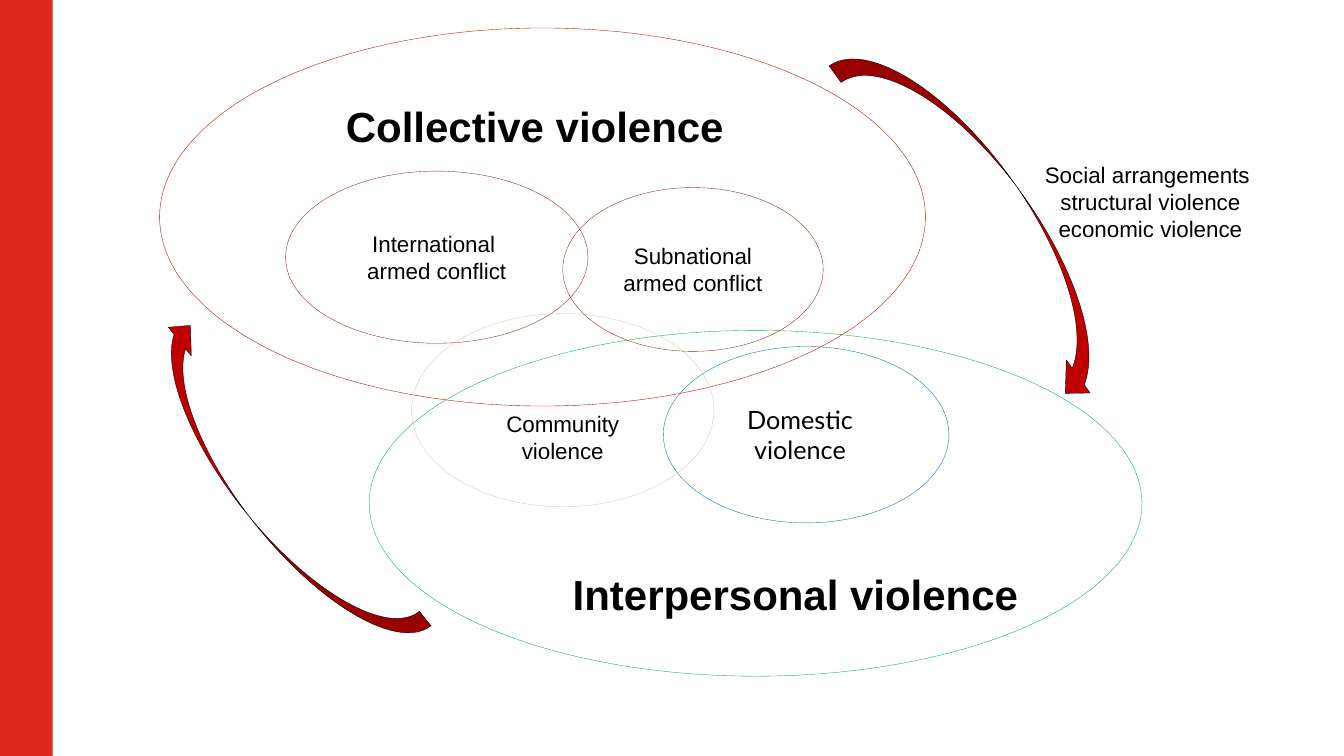
from dataclasses import dataclass

from pptx import Presentation
from pptx.dml.color import RGBColor
from pptx.enum.shapes import MSO_SHAPE
from pptx.enum.text import MSO_ANCHOR, MSO_AUTO_SIZE, PP_ALIGN
from pptx.util import Pt

RECTANGLE = MSO_SHAPE.RECTANGLE
OVAL = MSO_SHAPE.OVAL
CURVED_ARROW = MSO_SHAPE.CURVED_DOWN_ARROW
MIDDLE = MSO_ANCHOR.MIDDLE
GROW = MSO_AUTO_SIZE.SHAPE_TO_FIT_TEXT
LEFT, CENTER = PP_ALIGN.LEFT, PP_ALIGN.CENTER


@dataclass(frozen=True)
class Theme:
    bar: str = "DA291C"
    collective: str = "C00000"
    conflict: str = "A11E15"
    community: str = "D1CCBD"
    interpersonal: str = "00B050"
    domestic: str = "0070C0"
    arrow: str = "C00000"
    ink: str = "000000"
    font: str = "Arial"
    domestic_font: str = "Lato"
    heading_size: float = 30
    domestic_size: float = 18
    label_size: float = 16
    line_width: float = 0.25


THEME = Theme()


def add_outline(slide, kind, place, fill=None, line=None):
    """Add a preset shape at place (left, top, width, height in points)."""
    shape = slide.shapes.add_shape(kind, *map(Pt, place))
    shape.shadow.inherit = False
    if fill:
        shape.fill.solid()
        shape.fill.fore_color.rgb = RGBColor.from_string(fill)
    else:
        shape.fill.background()
    if line:
        shape.line.color.rgb = RGBColor.from_string(line)
        shape.line.width = Pt(THEME.line_width)
    else:
        shape.line.fill.background()
    return shape


def write_lines(frame, lines, size=THEME.label_size, font=THEME.font,
                bold=False, align=CENTER):
    frame.word_wrap = True
    for number, line in enumerate(lines):
        para = frame.add_paragraph() if number else frame.paragraphs[0]
        para.alignment = align
        span = para.add_run()
        span.text = line
        span.font.name = font
        span.font.size = Pt(size)
        span.font.bold = bold
        span.font.color.rgb = RGBColor.from_string(THEME.ink)


def add_ellipse(slide, place, color, lines=(), top_inset=3.6):
    ellipse = add_outline(slide, OVAL, place, line=color)
    if lines:
        frame = ellipse.text_frame
        frame.vertical_anchor = MIDDLE
        frame.margin_top = Pt(top_inset)
        write_lines(frame, lines)


def add_arrow(slide, place, angle):
    arrow = add_outline(slide, CURVED_ARROW, place, THEME.arrow, THEME.ink)
    arrow.rotation = angle


def add_label(slide, place, lines, **style):
    box = slide.shapes.add_textbox(*map(Pt, place))
    write_lines(box.text_frame, lines, **style)
    box.text_frame.auto_size = GROW


def add_heading(slide, place, text):
    add_label(slide, place, [text], size=THEME.heading_size, bold=True, align=LEFT)


def main():
    deck = Presentation()
    deck.slide_width, deck.slide_height = Pt(960), Pt(540)
    page = deck.slides.add_slide(deck.slide_layouts[6])

    add_outline(page, RECTANGLE, (0, 0, 37.7, 540), fill=THEME.bar)
    add_ellipse(page, (263.7, 236, 552, 247), THEME.interpersonal)
    add_ellipse(page, (473.8, 247.5, 204, 126), THEME.domestic)
    add_ellipse(page, (204, 122.2, 216, 123), THEME.conflict,
                ["International ", "armed conflict"])
    add_ellipse(page, (114, 20, 547, 270), THEME.collective)
    add_ellipse(page, (294, 224, 216, 138), THEME.community,
                ["Community violence"], top_inset=42)
    add_arrow(page, (53.3, 324.7, 288, 52.6), 231.3)
    add_arrow(page, (553, 123.8, 303, 58.3), 54.2)
    add_label(page, (520, 285, 103, 51), ["Domestic violence"],
              size=THEME.domestic_size, font=THEME.domestic_font)
    add_heading(page, (240, 68.4, 294, 44), "Collective violence")
    add_ellipse(page, (402, 134, 186, 117), THEME.conflict,
                ["Subnational armed conflict"])
    add_heading(page, (402, 402.5, 342, 44), "Interpersonal violence")
    add_label(page, (726, 111.6, 191.5, 65.5),
              ["Social arrangements ", "structural violence economic violence"])

    deck.save("out.pptx")


if __name__ == "__main__":
    main()
